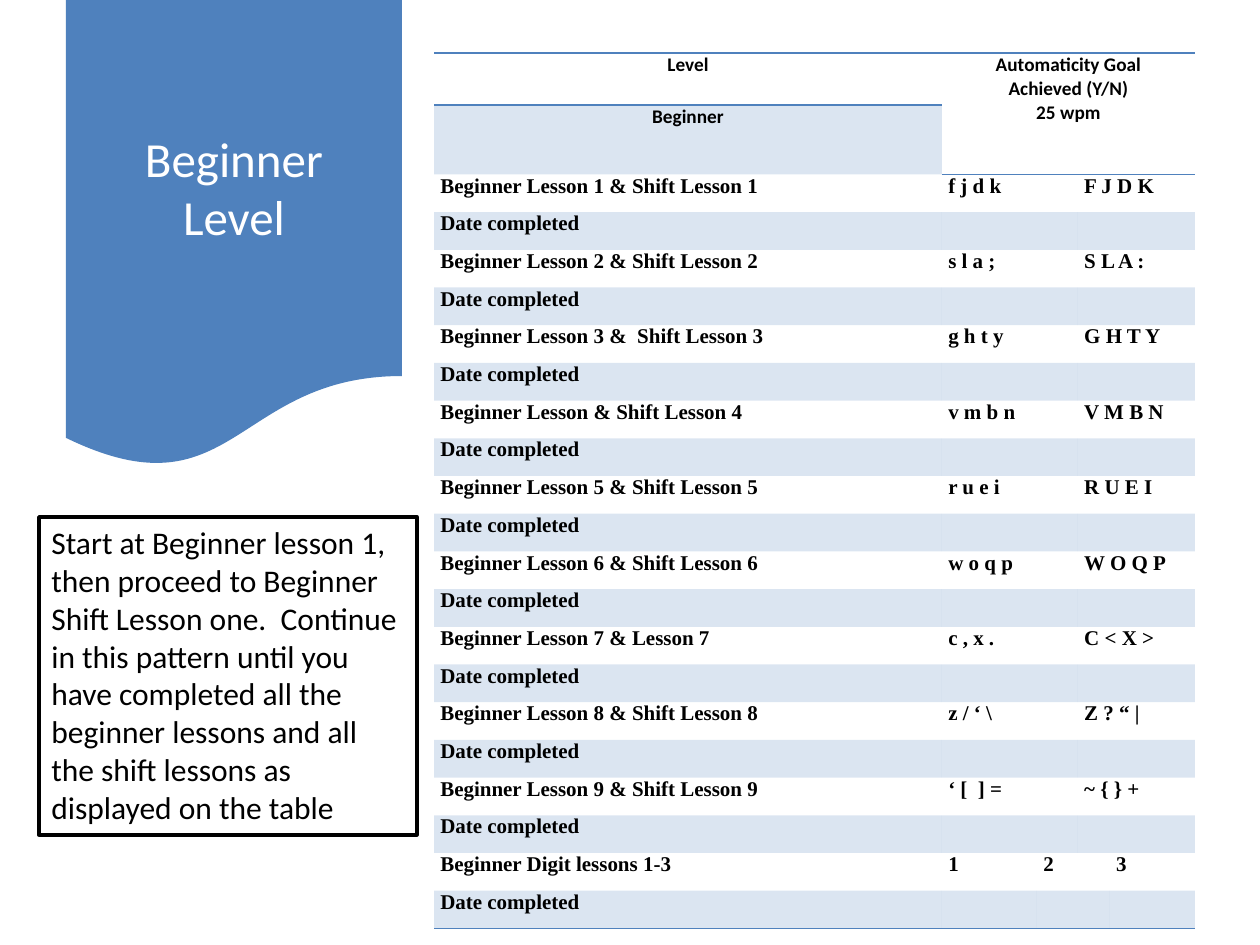
"""Build the Beginner Level keyboarding slide with its lesson checklist table."""
from dataclasses import dataclass

from lxml.etree import SubElement
from pptx import Presentation
from pptx.dml.color import RGBColor
from pptx.enum.shapes import MSO_SHAPE as SHAPE
from pptx.enum.text import MSO_ANCHOR as ANCHOR, MSO_AUTO_SIZE as AUTO, PP_ALIGN as ALIGN
from pptx.oxml.ns import qn
from pptx.util import Emu, Inches, Pt

PX = 914400 / 126
BLUE, BLACK, WHITE = "4F81BD", "000000", "FFFFFF"
NO_STYLE = "{2D5ABB26-0587-4C30-8999-92F81FD0307C}"
COLS = (508, 95, 41, 32, 85)
HEAD_H, LESSONS_H = 52, 755
PAIR, TRIPLE = ((1, 2), (3, 4)), ((2, 3),)


@dataclass(frozen=True)
class Box:
    x: int
    y: int
    w: int
    h: int


@dataclass(frozen=True)
class Lesson:
    name: str
    keys: tuple[str, ...]


@dataclass(frozen=True)
class Style:
    font: str
    size: int
    color: str = BLACK
    bold: bool = False
    align: ALIGN = ALIGN.LEFT


HEAD = Style("Calibri", 11, bold=True, align=ALIGN.CENTER)
BODY = Style("Times New Roman", 12, bold=True)
LESSONS = (
    Lesson("Beginner Lesson 1 & Shift Lesson 1", ("f j d k", "F J D K")),
    Lesson("Beginner Lesson 2 & Shift Lesson 2", ("s l a ;", "S L A :")),
    Lesson("Beginner Lesson 3 &  Shift Lesson 3", ("g h t y", "G H T Y")),
    Lesson("Beginner Lesson & Shift Lesson 4", ("v m b n", "V M B N")),
    Lesson("Beginner Lesson 5 & Shift Lesson 5", ("r u e i", "R U E I")),
    Lesson("Beginner Lesson 6 & Shift Lesson 6", ("w o q p", "W O Q P")),
    Lesson("Beginner Lesson 7 & Lesson 7", ("c , x .", "C < X >")),
    Lesson("Beginner Lesson 8 & Shift Lesson 8", ("z / ‘ \\", "Z ? “ |")),
    Lesson("Beginner Lesson 9 & Shift Lesson 9", ("‘ [  ] =", "~ { } +")),
    Lesson("Beginner Digit lessons 1-3", ("1", "2", "3")),
)


def px(n: float) -> Emu:
    return Emu(round(n * PX))


def rgb(color: str) -> RGBColor:
    return RGBColor.from_string(color)


def place(b: Box) -> tuple[Emu, ...]:
    return px(b.x), px(b.y), px(b.w), px(b.h)


def write(tf, text: str, style: Style) -> None:
    tf.text = text
    for p in tf.paragraphs:
        p.alignment = style.align
        p.font.name, p.font.size = style.font, Pt(style.size)
        p.font.bold = style.bold
        p.font.color.rgb = rgb(style.color)


def add_shape(slide, kind: SHAPE, box: Box, fill: str, line: str | None = None):
    sp = slide.shapes.add_shape(kind, *place(box))
    sp.shadow.inherit = False
    sp.fill.solid()
    sp.fill.fore_color.rgb = rgb(fill)
    if line:
        sp.line.color.rgb = rgb(line)
        sp.line.width = Pt(2)
    else:
        sp.line.fill.background()
    return sp


def set_borders(cell, sides: str) -> None:
    tcPr = cell._tc.get_or_add_tcPr()
    for side in sides:
        ln = SubElement(tcPr, qn(f"a:ln{side}"), w=str(Pt(1)))
        SubElement(SubElement(ln, qn("a:solidFill")), qn("a:srgbClr"), val=BLUE)


def set_tint(cell) -> None:
    cell.fill.solid()
    cell.fill.fore_color.rgb = rgb(BLUE)
    clr = cell._tc.tcPr.find(f"{qn('a:solidFill')}/{qn('a:srgbClr')}")
    SubElement(clr, qn("a:alpha"), val="20000")


def format_cell(cell, text: str, style: Style, borders: str, tinted: bool) -> None:
    cell.margin_left = cell.margin_right = Inches(0.05)
    cell.margin_top = cell.margin_bottom = 0
    write(cell.text_frame, text, style)
    set_borders(cell, borders)
    if tinted:
        set_tint(cell)
    else:
        cell.fill.background()


def add_checklist(slide, x: int, y: int) -> None:
    n_rows = 2 + 2 * len(LESSONS)
    box = Box(x, y, sum(COLS), 2 * HEAD_H + LESSONS_H)
    frame = slide.shapes.add_table(n_rows, len(COLS), *place(box))
    tbl = frame.table
    tbl.first_row = tbl.horz_banding = False
    tbl._tbl.tblPr.find(qn("a:tableStyleId")).text = NO_STYLE
    for col, w in zip(tbl.columns, COLS):
        col.width = px(w)
    for i, row in enumerate(tbl.rows):
        row.height = px(HEAD_H if i < 2 else LESSONS_H / (n_rows - 2))

    texts = {
        (0, 0): "Level",
        (0, 1): "Automaticity Goal\nAchieved (Y/N)\n25 wpm",
        (1, 0): "Beginner",
    }
    tbl.cell(0, 1).merge(tbl.cell(1, 4))
    for i, lesson in enumerate(LESSONS):
        top = 2 + 2 * i
        spans, starts = (PAIR, (1, 3)) if len(lesson.keys) == 2 else (TRIPLE, (1, 2, 4))
        texts[top, 0], texts[top + 1, 0] = lesson.name, "Date completed"
        texts.update({(top, c): key for c, key in zip(starts, lesson.keys)})
        for r in (top, top + 1):
            for first, last in spans:
                tbl.cell(r, first).merge(tbl.cell(r, last))

    for r in range(n_rows):
        for c in range(len(COLS)):
            ends = r == n_rows - 1 or (r == 1 and c > 0)
            borders = "TB" if r == 0 else "B" if ends else ""
            tinted = r % 2 == 1 and (r > 1 or c == 0)
            style = HEAD if r < 2 else BODY
            format_cell(tbl.cell(r, c), texts.get((r, c), ""), style, borders, tinted)


def main() -> None:
    prs = Presentation()
    prs.slide_width, prs.slide_height = Inches(10), Inches(7.5)
    slide = prs.slides.add_slide(prs.slide_layouts[6])

    add_shape(slide, SHAPE.FLOWCHART_DOCUMENT, Box(66, 0, 336, 469), BLUE)
    title = slide.shapes.add_textbox(*place(Box(87, 24, 294, 326))).text_frame
    title.word_wrap = True
    title.vertical_anchor = ANCHOR.MIDDLE
    write(title, "Beginner Level", Style("Calibri", 28, WHITE, align=ALIGN.CENTER))

    add_checklist(slide, 434, 53)

    tf = add_shape(slide, SHAPE.RECTANGLE, Box(39, 517, 378, 318), WHITE, BLACK).text_frame
    tf.word_wrap = True
    tf.auto_size = AUTO.SHAPE_TO_FIT_TEXT
    tf.vertical_anchor = ANCHOR.TOP
    write(
        tf,
        "Start at Beginner lesson 1, then proceed to Beginner Shift Lesson one.  "
        "Continue in this pattern until you have completed all the beginner lessons "
        "and all the shift lessons as displayed on the table",
        Style("Calibri", 18),
    )
    prs.save("out.pptx")


if __name__ == "__main__":
    main()
